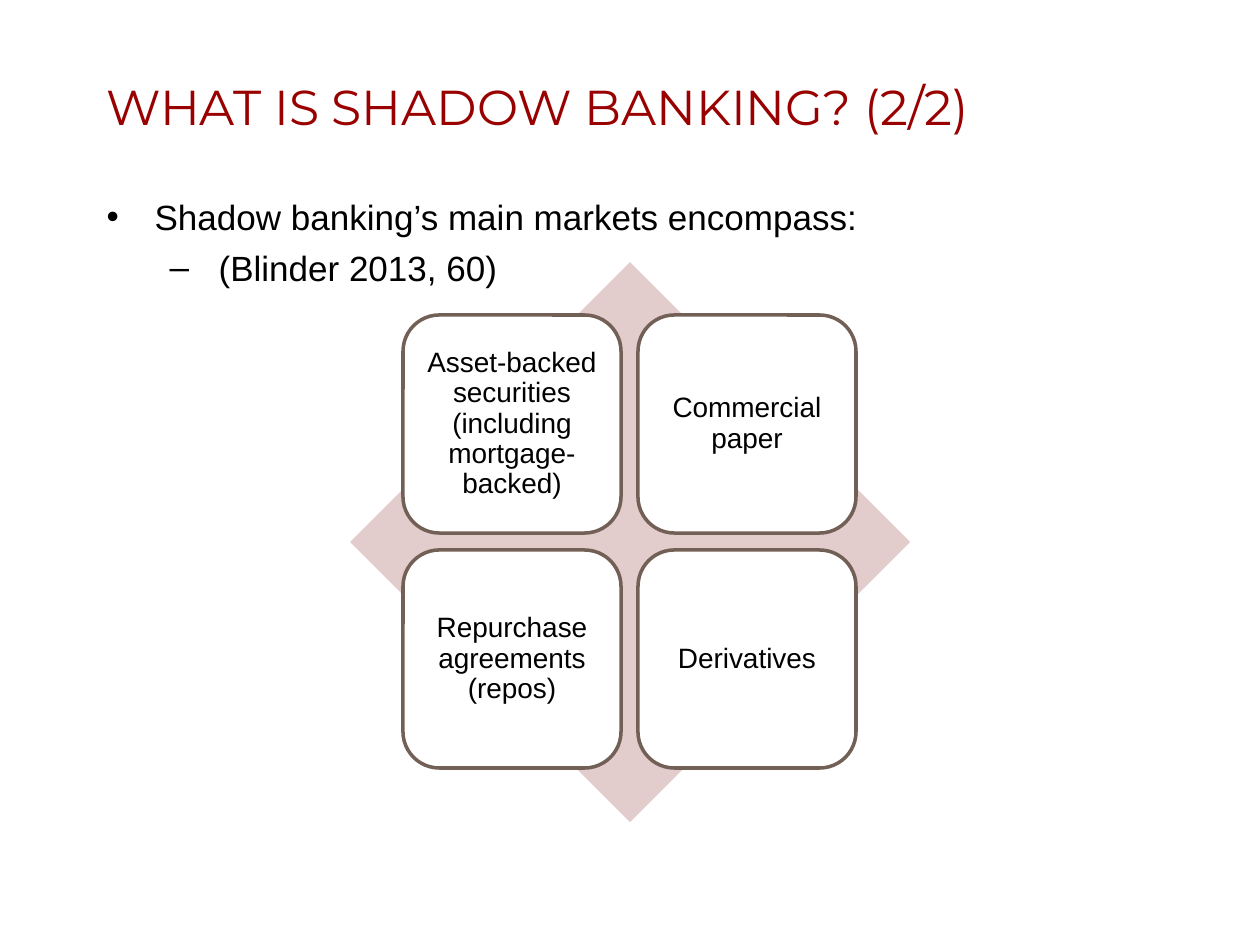
"""Build the slide on the main markets of shadow banking."""
from lxml import etree
from pptx import Presentation
from pptx.dml.color import RGBColor
from pptx.enum.shapes import MSO_SHAPE
from pptx.enum.text import MSO_ANCHOR, PP_ALIGN
from pptx.oxml.ns import qn
from pptx.util import Emu, Pt

PX = 914400 / 126
COLORS = {
    "title": "990000",
    "text": "000000",
    "diamond": "E3CCCC",
    "card": "FFFFFF",
    "border": "726056",
}


def px(*values):
    return [Emu(round(v * PX)) for v in values]


def write(p, text, size=20, font="Arial", color="text", align=PP_ALIGN.LEFT,
          before=0, spacing=1.0, level=0, bullet=None, margin=0, hang=0):
    p.level = level
    p.alignment = align
    p.space_before = Pt(before)
    p.line_spacing = spacing
    if bullet:
        pPr = p._p.get_or_add_pPr()
        left, indent = px(margin, -hang)
        pPr.set("marL", str(left))
        pPr.set("indent", str(indent))
        etree.SubElement(pPr, qn("a:buFont")).set("typeface", "Arial")
        etree.SubElement(pPr, qn("a:buChar")).set("char", bullet)
    r = p.add_run()
    r.text = text
    r.font.size = Pt(size)
    r.font.name = font
    r.font.color.rgb = RGBColor.from_string(COLORS[color])


prs = Presentation()
prs.slide_width, prs.slide_height = px(1260, 945)
s = prs.slides.add_slide(prs.slide_layouts[1])

title = s.shapes.title
title.left, title.top, title.width, title.height = px(94, 53, 1071, 105)
title.text_frame.vertical_anchor = MSO_ANCHOR.MIDDLE
write(title.text_frame.paragraphs[0], "WHAT IS SHADOW BANKING? (2/2)",
      size=28, font="Montserrat", color="title")

body = s.placeholders[1]
body.left, body.top, body.width, body.height = px(94, 189, 1071, 588)
tf = body.text_frame
write(tf.paragraphs[0], "Shadow banking’s main markets encompass:",
      bullet="•", margin=48, hang=48)
write(tf.add_paragraph(), "(Blinder 2013, 60)", before=5, level=1,
      bullet="–", margin=112, hang=49)

diamond = s.shapes.add_shape(MSO_SHAPE.DIAMOND, *px(350, 262, 560, 560))
diamond.shadow.inherit = False
diamond.fill.solid()
diamond.fill.fore_color.rgb = RGBColor.from_string(COLORS["diamond"])
diamond.line.fill.background()

markets = [
    "Asset-backed securities (including mortgage-backed)",
    "Commercial paper",
    "Repurchase agreements (repos)",
    "Derivatives",
]
LEFT, TOP, SIZE, PITCH = 403, 315, 218, 235
for i, market in enumerate(markets):
    row, col = divmod(i, 2)
    sp = s.shapes.add_shape(
        MSO_SHAPE.ROUNDED_RECTANGLE,
        *px(LEFT + col * PITCH, TOP + row * PITCH, SIZE, SIZE))
    sp.shadow.inherit = False
    sp.fill.solid()
    sp.fill.fore_color.rgb = RGBColor.from_string(COLORS["card"])
    sp.line.color.rgb = RGBColor.from_string(COLORS["border"])
    sp.line.width = Pt(2)
    tf = sp.text_frame
    tf.word_wrap = True
    tf.vertical_anchor = MSO_ANCHOR.MIDDLE
    tf.margin_left, tf.margin_top, tf.margin_right, tf.margin_bottom = px(9, 9, 9, 9)
    write(tf.paragraphs[0], market, size=16, align=PP_ALIGN.CENTER, spacing=0.9)

prs.save("out.pptx")
